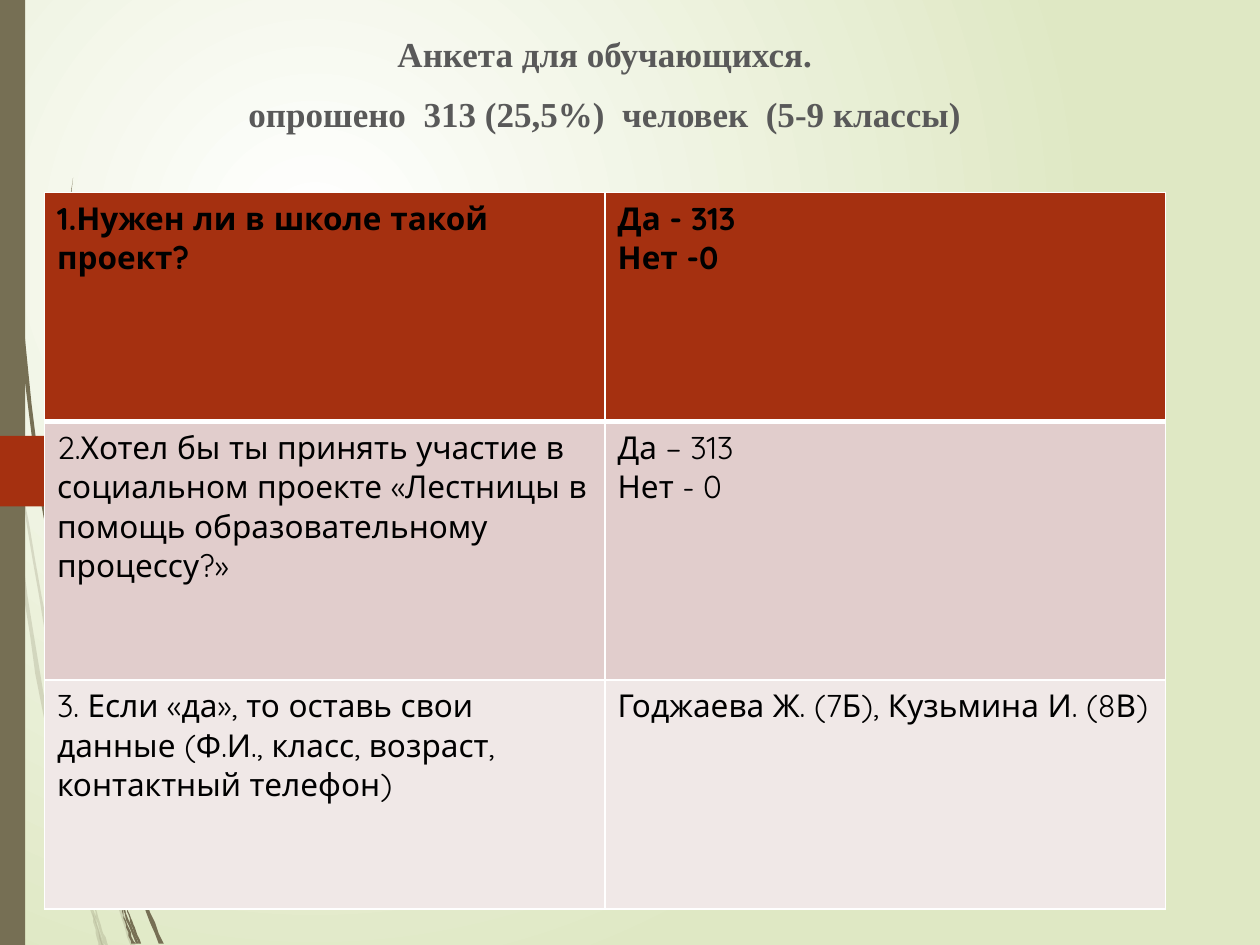
from collections import namedtuple
from math import pi, sin
from pptx import Presentation
from pptx.dml.color import RGBColor
from pptx.enum.shapes import MSO_SHAPE as Shape
from pptx.enum.text import MSO_AUTO_SIZE as Fit, MSO_ANCHOR as Anchor, PP_ALIGN as Align
from pptx.oxml import parse_xml
from pptx.oxml.ns import nsdecls
from pptx.util import Pt

BROWN, RUST, WHITE, LIME = "766F54", "A53010", "FFFFFF", "DFE8C4"
GREY, BLACK, ROSE, BLUSH = "595959", "000000", "E1CDCC", "F0E8E7"

# A blade of grass bends from start through mid to end; girth is its greatest width.
# A leaf is pointed at both ends, a root is widest at its end.
Blade = namedtuple("Blade", "kind start mid end girth")
STEP = 0.72  # points in one unit of the blade grid
PARTS = 12   # pieces along one side of a blade

PALE = [
    Blade("leaf", (2, 282), (4, 320), (8, 350), 3),
    Blade("leaf", (10, 345), (41, 521), (59, 599), 3),
    Blade("root", (61, 596), (87, 693), (106, 751), 4),
    Blade("root", (73, 711), (78, 731), (85, 751), 3),
    Blade("leaf", (8, 350), (30, 535), (70, 714), 3),
    Blade("leaf", (58, 599), (62, 650), (73, 711), 3),
    Blade("leaf", (60, 596), (100, 375), (217, 153), 1.5),
    Blade("root", (70, 714), (75, 732), (80, 751), 3),
    Blade("leaf", (59, 586), (59, 598), (61, 610), 3),
    Blade("root", (65, 683), (72, 716), (82, 751), 2),
]
DARK = [
    Blade("leaf", (3, 0), (15, 240), (47, 481), 4),
    Blade("leaf", (50, 472), (66, 559), (88, 645), 4),
    Blade("root", (91, 641), (108, 697), (128, 749), 4),
    Blade("leaf", (47, 477), (66, 600), (97, 722), 4),
    Blade("leaf", (58, 141), (45, 305), (50, 472), 1.5),
    Blade("root", (100, 719), (105, 734), (111, 749), 3),
    Blade("leaf", (45, 449), (48, 477), (53, 505), 3),
    Blade("leaf", (90, 637), (122, 494), (216, 344), 2),
    Blade("root", (97, 722), (101, 736), (106, 749), 3),
    Blade("leaf", (88, 645), (92, 682), (100, 719), 4),
    Blade("leaf", (88, 631), (89, 643), (91, 656), 3),
    Blade("root", (91, 691), (98, 720), (109, 749), 3),
]

HEAD = ["Анкета для обучающихся.", "опрошено  313 (25,5%)  человек  (5-9 классы)"]
Row = namedtuple("Row", "hue high texts")
ROWS = [
    Row(RUST, 131, ["1.Нужен ли в школе такой проект?", "Да - 313\nНет -0"]),
    Row(ROSE, 147.6, ["2.Хотел бы ты принять участие в социальном проекте "
                      "«Лестницы в помощь образовательному процессу?»",
                      "Да – 313\nНет - 0"]),
    Row(BLUSH, 131, ["3. Если «да», то оставь свои данные (Ф.И., класс, возраст, "
                     "контактный телефон)", "Годжаева Ж. (7Б), Кузьмина И. (8В)"]),
]


def color(hue):
    return RGBColor.from_string(hue)


def tint(fill, hue):
    fill.solid()
    fill.fore_color.rgb = color(hue)


def plain(shape, hue, alpha=100):
    shape.shadow.inherit = False
    tint(shape.fill, hue)
    shape.line.fill.background()
    if alpha < 100:
        node = shape.fill._xPr.find(".//{*}srgbClr")
        node.append(parse_xml(f'<a:alpha {nsdecls("a")} val="{alpha * 1000}"/>'))


def style(para, font, size, hue, bold):
    for run in para.runs:
        run.font.name, run.font.size, run.font.bold = font, Pt(size), bold
        run.font.color.rgb = color(hue)


def curve(blade, t):
    """Point at share t of the quadratic curve that passes through mid."""
    point = []
    for start, mid, end in zip(blade.start, blade.mid, blade.end):
        pull = 2 * mid - (start + end) / 2
        point.append((1 - t) ** 2 * start + 2 * t * (1 - t) * pull + t ** 2 * end)
    return point


def outline(blade):
    """Down the left side of the blade and back up the right side."""
    left, right = [], []
    for i in range(PARTS + 1):
        t = i / PARTS
        x, y = curve(blade, t)
        half = blade.girth / 2 * (sin(pi * t) if blade.kind == "leaf" else t)
        left.append((x - half, y))
        right.append((x + half, y))
    return left + right[::-1]


def grass(slide, blades, x, y, alpha):
    shapes = slide.shapes.add_group_shape().shapes
    for blade in blades:
        first, *rest = outline(blade)
        pen = shapes.build_freeform(*first, scale=Pt(STEP))
        pen.add_line_segments(rest)
        plain(pen.convert_to_shape(Pt(x), Pt(y)), BROWN, alpha)


def edge(slide, x, y, high):
    grass(slide, PALE, x, y, 20)
    grass(slide, DARK, x, y, 100)
    # Side bar, then the arrow that starts from it
    for kind, top, wide, tall, hue in ((Shape.RECTANGLE, 0, 14.4, high, BROWN),
                                       (Shape.PENTAGON, 249.1, 107.3, 40.3, RUST)):
        plain(slide.shapes.add_shape(kind, Pt(x), Pt(y + top), Pt(wide), Pt(tall)), hue)


def backdrop(slide):
    stops = "".join(f'<a:gs pos="{pos}"><a:srgbClr val="{hue}"/></a:gs>'
                    for pos, hue in ((0, WHITE), (100000, LIME)))
    slide.background.fill.solid()
    back = slide.background.fill._xPr
    back.replace(back[0], parse_xml(
        f'<a:gradFill {nsdecls("a")} rotWithShape="1"><a:gsLst>{stops}</a:gsLst>'
        '<a:path path="circle"><a:fillToRect l="50000" t="50000" r="100000" b="100000"/>'
        '</a:path></a:gradFill>'))


def heading(slide, x, y, wide, high):
    title = slide.shapes.title.element
    title.getparent().remove(title)  # the heading stands in the body
    body = slide.placeholders[1]
    body.left, body.top, body.width, body.height = Pt(x), Pt(y), Pt(wide), Pt(high)
    frame = body.text_frame
    frame.text = "\n".join(HEAD)
    frame.auto_size, frame.vertical_anchor = Fit.NONE, Anchor.TOP
    for para in frame.paragraphs:
        para.alignment, para.space_before = Align.CENTER, Pt(10)
        # No bullet and no indent
        props = para._p.get_or_add_pPr()
        props.set("marL", "0")
        props.set("indent", "0")
        props.append(parse_xml(f'<a:buNone {nsdecls("a")}/>'))
        style(para, "Times New Roman", 20, GREY, True)


def border(cell, top, base):
    props = cell._tc.get_or_add_tcPr()
    for side, size in (("L", 1), ("R", 1), ("T", top), ("B", base)):
        props.append(parse_xml(
            f'<a:ln{side} {nsdecls("a")} w="{Pt(size)}"><a:solidFill>'
            f'<a:srgbClr val="{WHITE}"/></a:solidFill></a:ln{side}>'))


def survey(slide, x, y, wide):
    high = sum(row.high for row in ROWS)
    table = slide.shapes.add_table(len(ROWS), 2, Pt(x), Pt(y), Pt(wide), Pt(high)).table
    for col in table.columns:
        col.width = Pt(wide / 2)
    for i, (row, line) in enumerate(zip(ROWS, table.rows)):
        line.height = Pt(row.high)
        for cell, text in zip(line.cells, row.texts):
            # The rule under the first row is thick
            border(cell, top=3 if i == 1 else 1, base=3 if i == 0 else 1)
            tint(cell.fill, row.hue)
            cell.text_frame.text = text
            for para in cell.text_frame.paragraphs:
                style(para, "Quicksand", 18, BLACK, i == 0)


def main():
    deck = Presentation()
    deck.slide_width, deck.slide_height = Pt(720), Pt(540)
    slide = deck.slides.add_slide(deck.slide_layouts[1])
    backdrop(slide)
    edge(slide, 0, 0, 540)
    heading(slide, 45.7, 15.1, 599.8, 85)
    survey(slide, 25.4, 109.9, 640.8)
    deck.save("out.pptx")


if __name__ == "__main__":
    main()
